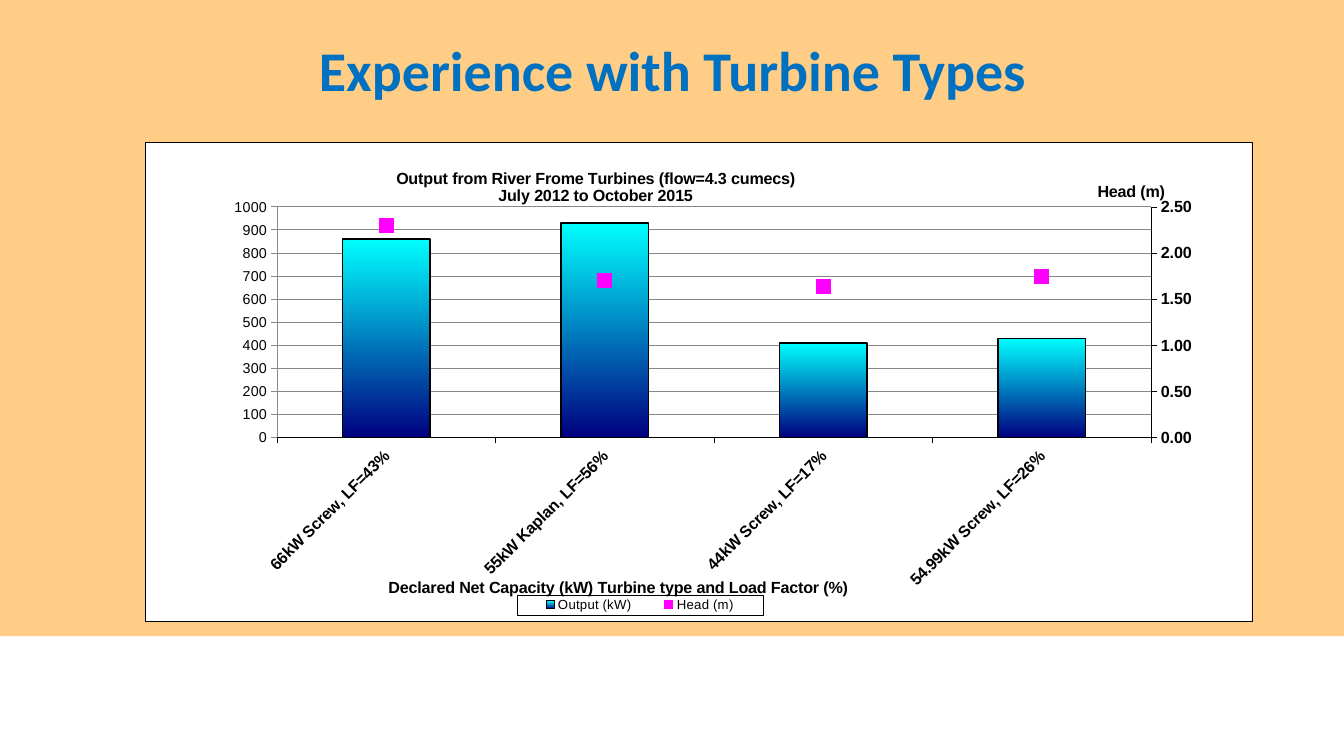
from collections import namedtuple

from lxml.etree import SubElement
from pptx import Presentation
from pptx.chart.axis import ValueAxis
from pptx.chart.data import CategoryChartData
from pptx.dml.color import RGBColor
from pptx.enum.chart import XL_CHART_TYPE as ChartType
from pptx.enum.chart import XL_LEGEND_POSITION as LegendPosition
from pptx.enum.chart import XL_MARKER_STYLE as MarkerStyle
from pptx.enum.chart import XL_TICK_MARK as TickMark
from pptx.enum.shapes import MSO_SHAPE as Preset
from pptx.enum.text import MSO_ANCHOR as Anchor
from pptx.enum.text import PP_ALIGN as Align
from pptx.oxml import parse_xml
from pptx.oxml.ns import nsdecls, qn
from pptx.util import Cm, Pt

ORANGE = RGBColor(0xFF, 0xAA, 0x2D)
BLUE = RGBColor(0x00, 0x70, 0xC0)
CYAN = RGBColor(0x00, 0xFF, 0xFF)
NAVY = RGBColor(0x00, 0x00, 0x80)
MAGENTA = RGBColor(0xFF, 0x00, 0xFF)
BLACK = RGBColor(0x00, 0x00, 0x00)
WHITE = RGBColor(0xFF, 0xFF, 0xFF)

Box = namedtuple("Box", "left top width height")
PAGE = Box(0, 0, Cm(33.87), Cm(19.05))
LABEL = {"name": "Arial", "size": Pt(11.5), "bold": True}
KEY = {"name": "Arial", "size": Pt(9.4), "bold": False}
HEADING = {"name": "Calibri", "size": Pt(40), "bold": True}

TURBINES = {
    "66kW Screw, LF=43%": (860, 2.3),
    "55kW Kaplan, LF=56%": (930, 1.7),
    "44kW Screw, LF=17%": (410, 1.64),
    "54.99kW Screw, LF=26%": (430, 1.75),
}

HEAD_PLOT = f"""<c:lineChart {nsdecls('c')}><c:grouping val="standard"/>
<c:varyColors val="0"/><c:marker val="1"/>
<c:axId val="5001"/><c:axId val="5002"/></c:lineChart>"""

HEAD_CATEGORIES = f"""<c:catAx {nsdecls('c')}><c:axId val="5001"/>
<c:scaling><c:orientation val="minMax"/></c:scaling><c:delete val="1"/>
<c:axPos val="b"/><c:crossAx val="5002"/><c:crosses val="autoZero"/></c:catAx>"""

HEAD_VALUES = f"""<c:valAx {nsdecls('c')}><c:axId val="5002"/>
<c:scaling><c:orientation val="minMax"/></c:scaling><c:delete val="0"/>
<c:axPos val="r"/><c:tickLblPos val="nextTo"/>
<c:crossAx val="5001"/><c:crosses val="max"/></c:valAx>"""


def set_all(target, values):
    """Set each attribute of the target from a dict."""
    for name, value in values.items():
        setattr(target, name, value)


def style_font(font, values, color=BLACK):
    """Give a font its face, size, weight and colour."""
    set_all(font, values)
    font.color.rgb = color


def style_line(line, width):
    """Draw a black line of the given width in points."""
    line.color.rgb = BLACK
    line.width = Pt(width)


def remove_parts(parent, tag):
    """Remove the children with the given tag."""
    for part in parent.findall(qn(tag)):
        parent.remove(part)


def place_part(part, index, **layout):
    """Fix a chart part at fractions of the chart area."""
    remove_parts(part, "c:layout")
    holder = parse_xml(f"<c:layout {nsdecls('c')}><c:manualLayout/></c:layout>")
    for name, value in layout.items():
        SubElement(holder[0], qn(f"c:{name}")).set("val", str(value))
    part.insert(index, holder)


def framed(fill):
    """Return chart area properties with a fill and a thin black border."""
    return parse_xml(
        f'<c:spPr {nsdecls("c", "a")}>'
        f'<a:solidFill><a:srgbClr val="{fill}"/></a:solidFill>'
        f'<a:ln w="3175"><a:solidFill><a:srgbClr val="{BLACK}"/></a:solidFill></a:ln>'
        "</c:spPr>")


def write_title(title, lines, x, y):
    """Write a level title whose top left corner is at x, y."""
    frame = title.text_frame
    frame.text = "\n".join(lines)
    for para in frame.paragraphs:
        style_font(para.font, LABEL)
        for span in para.runs:
            style_font(span.font, LABEL)
    title.element.find(".//" + qn("a:bodyPr")).set("rot", "0")
    place_part(title.element, 1, xMode="edge", yMode="edge", x=x, y=y)


def style_axis(axis, title, x, y):
    """Format an axis and its title."""
    axis.major_tick_mark = TickMark.OUTSIDE
    axis.minor_tick_mark = TickMark.NONE
    style_line(axis.format.line, 0.25)
    style_font(axis.tick_labels.font, LABEL)
    write_title(axis.axis_title, [title], x, y)


def scale_axis(axis, top, step, number_format):
    """Scale a value axis from zero and format its numbers."""
    set_all(axis, {"minimum_scale": 0, "maximum_scale": top, "major_unit": step})
    set_all(axis.tick_labels, {"number_format": number_format,
                               "number_format_is_linked": False})


def add_head_axis(chart):
    """Move the head series to a line plot on a right axis."""
    area = chart.element.find(".//" + qn("c:plotArea"))
    bars = area.find(qn("c:barChart"))
    head = bars.findall(qn("c:ser"))[1]
    remove_parts(head, "c:invertIfNegative")
    lines = parse_xml(HEAD_PLOT)
    lines.find(qn("c:varyColors")).addnext(head)
    bars.addnext(lines)
    values = parse_xml(HEAD_VALUES)
    area.find(qn("c:valAx")).addnext(values)
    values.addnext(parse_xml(HEAD_CATEGORIES))
    place_part(area, 0, layoutTarget="inner", xMode="edge", yMode="edge",
               x=0.119, y=0.135, w=0.79, h=0.481)
    return ValueAxis(values)


def style_series(chart):
    """Colour the output bars and the head markers."""
    bars, heads = chart.plots
    bars.gap_width = 150
    bars.vary_by_categories = False
    output = bars.series[0].format
    output.fill.gradient()
    output.fill.gradient_angle = 270
    for stop, color in zip(output.fill.gradient_stops, (CYAN, NAVY)):
        stop.color.rgb = color
    style_line(output.line, 1)
    head = heads.series[0]
    head.smooth = False
    head.format.line.fill.background()
    set_all(head.marker, {"style": MarkerStyle.SQUARE, "size": 10})
    head.marker.format.fill.solid()
    head.marker.format.fill.fore_color.rgb = MAGENTA
    head.marker.format.line.color.rgb = MAGENTA


def add_legend(chart):
    """Place the framed legend under the category title."""
    chart.has_legend = True
    set_all(chart.legend, {"position": LegendPosition.BOTTOM, "include_in_layout": False})
    style_font(chart.legend.font, KEY)
    legend = chart.element.find(".//" + qn("c:legend"))
    place_part(legend, 1, xMode="edge", yMode="edge", x=0.336, y=0.944, w=0.222, h=0.042)
    legend.find(qn("c:overlay")).addnext(framed(WHITE))


def add_output_chart(page, box):
    """Chart turbine output against head inside the box."""
    data = CategoryChartData()
    data.categories = list(TURBINES)
    for name, values in zip(("Output (kW)", "Head (m)"), zip(*TURBINES.values())):
        data.add_series(name, values)
    chart = page.shapes.add_chart(ChartType.COLUMN_CLUSTERED, *box, data).chart
    style_font(chart.font, {"name": "Arial", "size": Pt(10.2)})
    root = chart.element
    root.find(qn("c:chart")).addnext(framed(WHITE))
    remove_parts(root, "c:roundedCorners")
    root.find(qn("c:chart")).addprevious(
        parse_xml(f'<c:roundedCorners {nsdecls("c")} val="0"/>'))
    write_title(chart.chart_title, ["Output from River Frome Turbines (flow=4.3 cumecs)",
                                    "July 2012 to October 2015"], 0.224, 0.046)
    right = add_head_axis(chart)
    style_axis(chart.category_axis,
               "Declared Net Capacity (kW) Turbine type and Load Factor (%)", 0.217, 0.9)
    labels = root.find(".//" + qn("c:catAx")).find(qn("c:txPr"))
    labels.find(qn("a:bodyPr")).set("rot", "-2700000")
    style_axis(chart.value_axis, "MWh", 0.09, 0.066)
    scale_axis(chart.value_axis, 1000, 100, "0")
    style_line(chart.value_axis.major_gridlines.format.line, 0.25)
    style_axis(right, "Head (m)", 0.858, 0.074)
    scale_axis(right, 2.5, 0.5, "0.00")
    style_series(chart)
    add_legend(chart)


def add_backdrop(page, box):
    """Lay a translucent orange panel behind everything."""
    panel = page.shapes.add_shape(Preset.RECTANGLE, *box)
    panel.shadow.inherit = False
    panel.fill.solid()
    panel.fill.fore_color.rgb = ORANGE
    panel.line.fill.background()
    color = panel.element.spPr.find(".//" + qn("a:srgbClr"))
    SubElement(color, qn("a:alpha")).set("val", "58000")
    page.shapes.element.insert(2, panel.element)


def add_heading(page, box):
    """Write the slide title in its placeholder."""
    title = page.shapes.title
    set_all(title, box._asdict())
    frame = title.text_frame
    frame.text = "Experience with Turbine Types"
    set_all(frame, {"vertical_anchor": Anchor.MIDDLE, "word_wrap": True})
    para = frame.paragraphs[0]
    set_all(para, {"alignment": Align.CENTER, "line_spacing": 0.9})
    style_font(para.runs[0].font, HEADING, BLUE)


def main():
    """Build the turbine slide."""
    deck = Presentation()
    set_all(deck, {"slide_width": PAGE.width, "slide_height": PAGE.height})
    page = deck.slides.add_slide(deck.slide_layouts.get_by_name("Title Only"))
    add_backdrop(page, PAGE._replace(height=Cm(16.03)))
    add_heading(page, Box(Cm(2.34), 0, Cm(29.21), Cm(3.68)))
    add_output_chart(page, Box(Cm(3.66), Cm(3.58), Cm(27.89), Cm(12.09)))
    deck.save("out.pptx")


if __name__ == "__main__":
    main()
